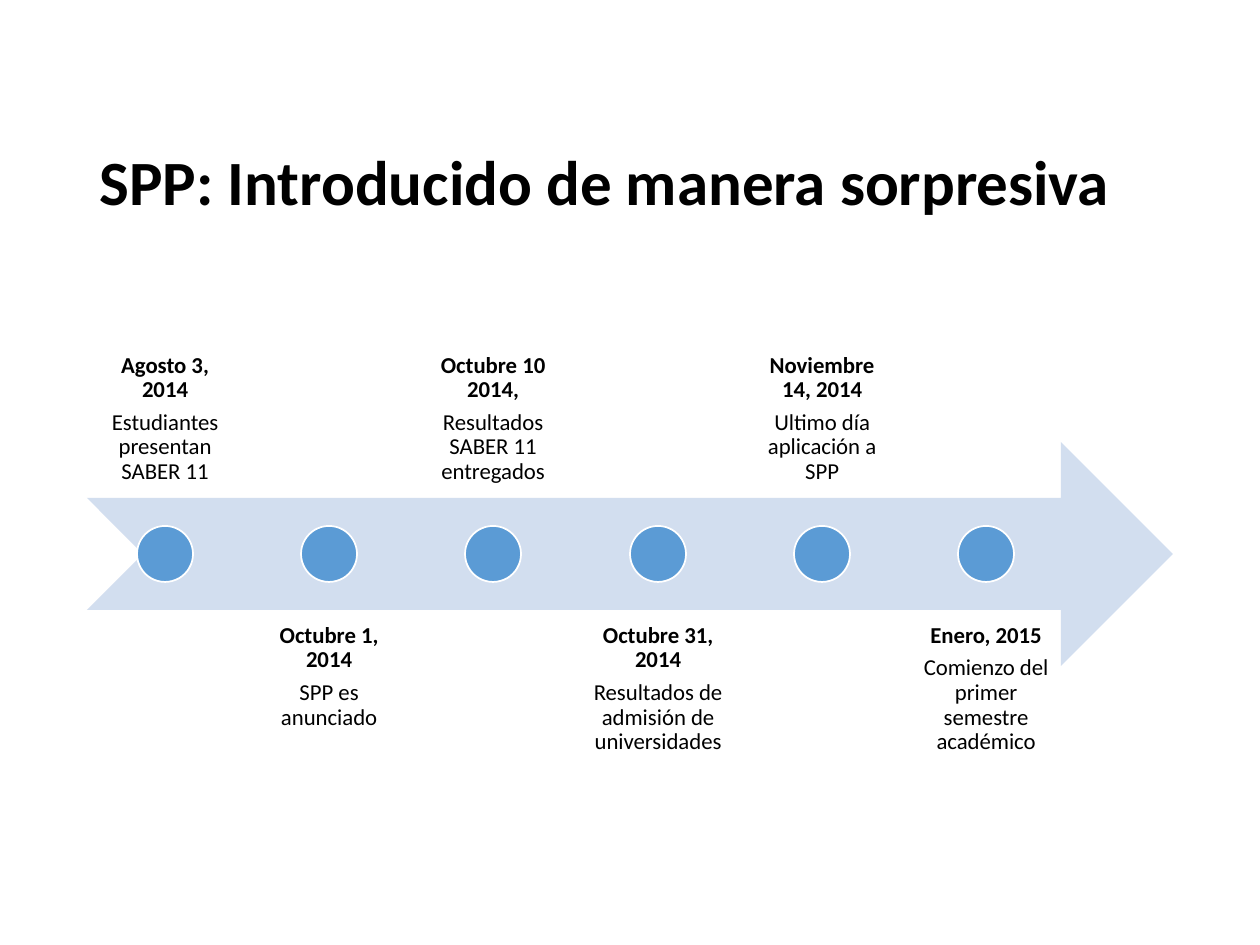
import pptx
import pptx.dml.color
import pptx.enum.shapes
import pptx.enum.text
import pptx.util

SHAPE = pptx.enum.shapes.MSO_SHAPE
ALIGN = pptx.enum.text.PP_ALIGN
ANCHOR = pptx.enum.text.MSO_ANCHOR
NO_FIT = pptx.enum.text.MSO_AUTO_SIZE.NONE

PX = 914400 // 126  # EMU per px


def px(*values):
    return [v * PX for v in values]


def rgb(value):
    return pptx.dml.color.RGBColor.from_string(value)


def style(target, formats):
    for name, value in formats.items():
        setattr(target, name, value)


class Deck:
    FONT = "Calibri"
    TEXT, ARROW, DOT, WHITE = "000000", "D2DEEF", "5B9BD5", "FFFFFF"

    def __init__(self, width, height):
        self.prs = pptx.Presentation()
        self.prs.slide_width, self.prs.slide_height = px(width, height)

    def add_slide(self):
        self.s = self.prs.slides.add_slide(self.prs.slide_layouts[5])

    def fill_paragraph(self, p, text, size, bold, formats):
        r = p.add_run()
        r.text = text
        style(r.font, {"name": self.FONT, "size": pptx.util.Pt(size), "bold": bold})
        r.font.color.rgb = rgb(self.TEXT)
        style(p, {"line_spacing": 0.9, **formats})

    def title(self, text, *box):
        sp = self.s.shapes.title
        sp.left, sp.top, sp.width, sp.height = px(*box)
        tf = sp.text_frame
        style(tf, {"word_wrap": True, "auto_size": NO_FIT, "vertical_anchor": ANCHOR.MIDDLE})
        self.fill_paragraph(tf.paragraphs[0], text, 36, True, {"alignment": ALIGN.LEFT})

    def shape(self, kind, fill, line, *box):
        sp = self.s.shapes.add_shape(kind, *px(*box))
        sp.shadow.inherit = False
        sp.fill.solid()
        sp.fill.fore_color.rgb = rgb(fill)
        if line:
            sp.line.color.rgb = rgb(line)
            sp.line.width = pptx.util.Pt(1)
        else:
            sp.line.fill.background()

    def label(self, date, event, anchor, *box):
        tf = self.s.shapes.add_textbox(*px(*box)).text_frame
        inset = pptx.util.Inches(0.1)
        style(tf, {"word_wrap": True, "auto_size": NO_FIT, "vertical_anchor": anchor,
                   "margin_left": inset, "margin_right": inset,
                   "margin_top": inset, "margin_bottom": inset})
        self.fill_paragraph(tf.paragraphs[0], date, 13, True,
                            {"alignment": ALIGN.CENTER, "space_after": pptx.util.Pt(4.55)})
        self.fill_paragraph(tf.add_paragraph(), event, 13, False, {"alignment": ALIGN.CENTER})


MILESTONES = [
    ("Agosto 3, 2014", "Estudiantes presentan SABER 11"),
    ("Octubre 1, 2014", "SPP es anunciado"),
    ("Octubre 10 2014,", "Resultados SABER 11 entregados"),
    ("Octubre 31, 2014", "Resultados de admisión de universidades"),
    ("Noviembre 14, 2014", "Ultimo día aplicación a SPP"),
    ("Enero, 2015", "Comienzo del primer semestre académico"),
]
LEFT, WIDTH = 87, 1086
ARROW_TOP, BAND = 442, 224
LABEL_W, DOT = 156, 56
SPAN = 821  # first label to last label


def main():
    deck = Deck(1260, 945)
    deck.add_slide()
    deck.title("SPP: Introducido de manera sorpresiva", LEFT, 137, WIDTH, 96)

    # Timeline arrow
    deck.shape(SHAPE.NOTCHED_RIGHT_ARROW, deck.ARROW, None, LEFT, ARROW_TOP, WIDTH, BAND)

    # Milestones, alternating above and below the arrow
    for i, (date, event) in enumerate(MILESTONES):
        x = LEFT + round(SPAN * i / (len(MILESTONES) - 1))
        above = i % 2 == 0
        anchor, top = (ANCHOR.BOTTOM, 273) if above else (ANCHOR.TOP, 611)
        deck.label(date, event, anchor, x, top, LABEL_W, BAND)
        deck.shape(SHAPE.OVAL, deck.DOT, deck.WHITE, x + (LABEL_W - DOT) // 2,
                   ARROW_TOP + (BAND - DOT) // 2, DOT, DOT)

    deck.prs.save("out.pptx")


if __name__ == "__main__":
    main()
